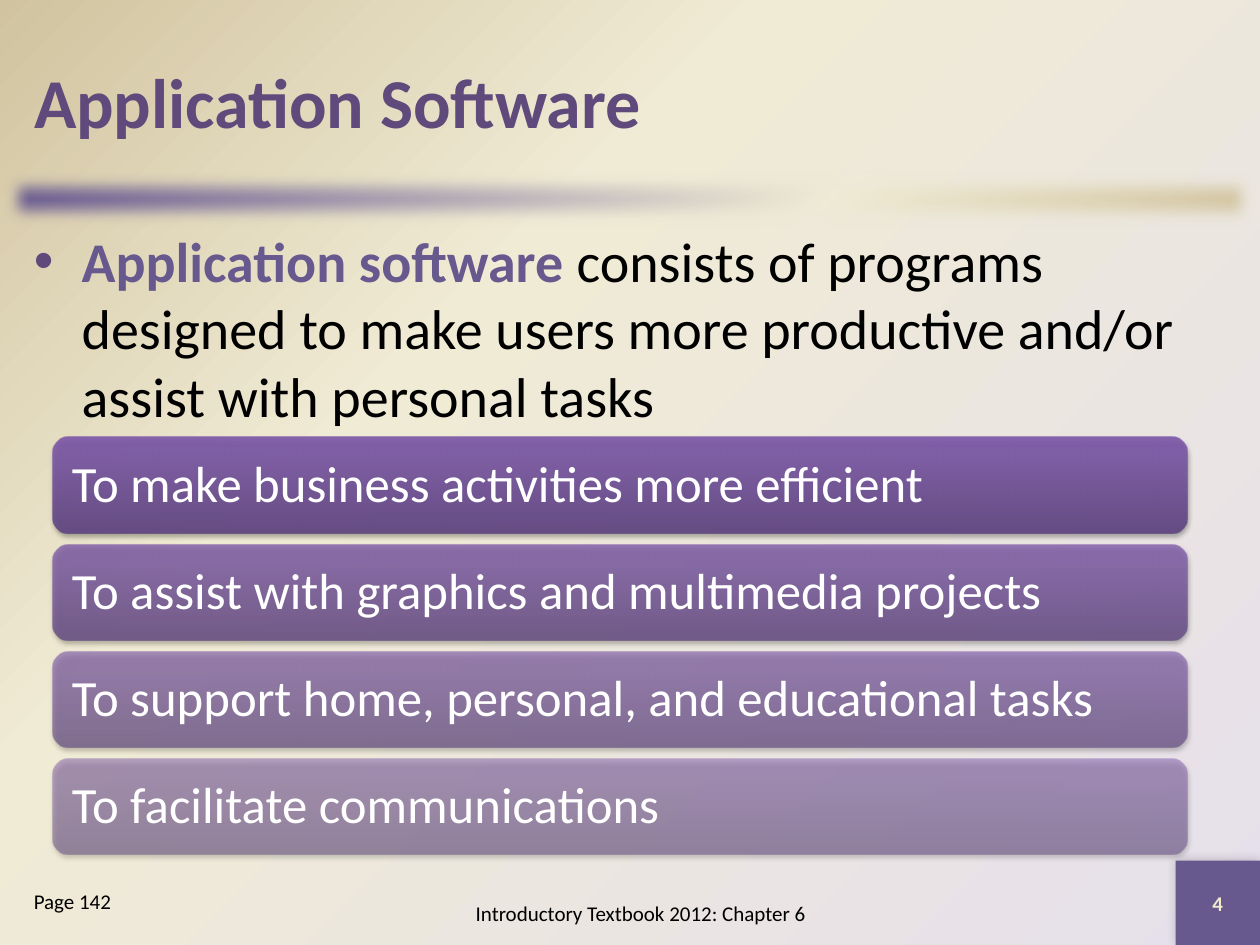
from dataclasses import dataclass

from lxml import etree
from pptx import Presentation
from pptx.dml.color import RGBColor
from pptx.enum.shapes import MSO_SHAPE
from pptx.enum.text import MSO_ANCHOR, PP_ALIGN
from pptx.oxml.ns import qn
from pptx.util import Inches, Pt

RECT, ROUNDED = MSO_SHAPE.RECTANGLE, MSO_SHAPE.ROUNDED_RECTANGLE
TOP, MIDDLE = MSO_ANCHOR.TOP, MSO_ANCHOR.MIDDLE
LEFT, CENTER = PP_ALIGN.LEFT, PP_ALIGN.CENTER


@dataclass(frozen=True)
class Theme:
    """Colours, font and type sizes of the slide."""
    font: str = "Calibri"
    title: str = "604A7B"
    accent: str = "67588E"
    lavender: str = "E6E0EC"
    cream: str = "F0EBD5"
    tan: str = "D1C39F"
    number: str = "EEEBCA"
    text: str = "000000"
    white: str = "FFFFFF"
    bars: tuple = ((0, "5F4480"), (80, "7B58A6"), (100, "7C57A8"))
    title_size: int = 40
    body_size: int = 32
    bar_size: int = 29
    small_size: int = 12


THEME = Theme()


def add_xml(parent, tag, **attrs):
    """Append a drawing element with the given attributes."""
    return etree.SubElement(parent, qn(tag), {k: str(v) for k, v in attrs.items()})


def add_color(parent, color, opacity=100):
    """Append a colour with an opacity in percent."""
    clr = add_xml(parent, "a:srgbClr", val=color)
    if opacity < 100:
        add_xml(clr, "a:alpha", val=opacity * 1000)


def set_gradient(fill, element, stops, angle=None, opacity=100):
    """Apply a linear gradient, or a circular one from the lower right corner."""
    fill.gradient()
    grad = element.find(".//" + qn("a:gradFill"))
    for child in list(grad):
        grad.remove(child)
    gs_lst = add_xml(grad, "a:gsLst")
    for pos, color in stops:
        add_color(add_xml(gs_lst, "a:gs", pos=pos * 1000), color, opacity)
    if angle is None:
        path = add_xml(grad, "a:path", path="circle")
        add_xml(path, "a:fillToRect", l=100000, t=100000)
    else:
        add_xml(grad, "a:lin", ang=angle * 60000, scaled=0)


def add_shadow(shape, opacity, blur, dist, angle):
    """Give a shape a soft black outer shadow."""
    effects = shape.element.spPr.find(qn("a:effectLst"))
    shadow = add_xml(effects, "a:outerShdw", blurRad=Pt(blur), dist=Pt(dist),
                     dir=angle * 60000, algn="ctr", rotWithShape=0)
    add_color(shadow, THEME.text, opacity)


def add_box(s, kind, left, top, width, height):
    """Add a shape without line or inherited shadow."""
    sp = s.shapes.add_shape(kind, Inches(left), Inches(top), Inches(width), Inches(height))
    sp.shadow.inherit = False
    sp.line.fill.background()
    return sp


def add_run(p, text, size, color, bold=False):
    """Add a formatted run to a paragraph."""
    r = p.add_run()
    r.text = text
    r.font.name = THEME.font
    r.font.size = Pt(size)
    r.font.bold = bold
    r.font.color.rgb = RGBColor.from_string(color)


def set_text(sp, text, size=THEME.small_size, color=THEME.text, bold=False,
             align=LEFT, anchor=MIDDLE, inset=0.1):
    """Write one formatted paragraph into a shape and return it."""
    tf = sp.text_frame
    tf.word_wrap = True
    tf.vertical_anchor = anchor
    tf.margin_left = tf.margin_right = Inches(inset)
    p = tf.paragraphs[0]
    p.alignment = align
    add_run(p, text, size, color, bold)
    return p


def add_text(s, text, left, top, width, height, **fmt):
    """Add a text box and return its paragraph."""
    sp = s.shapes.add_textbox(Inches(left), Inches(top), Inches(width), Inches(height))
    return set_text(sp, text, **fmt)


def add_bullet(p, color):
    """Give a paragraph a coloured bullet and a hanging indent."""
    pPr = p._p.get_or_add_pPr()
    pPr.set("marL", str(Inches(0.38)))
    pPr.set("indent", str(Inches(-0.38)))
    add_color(add_xml(pPr, "a:buClr"), color)
    add_xml(pPr, "a:buFont", typeface="Arial")
    add_xml(pPr, "a:buChar", char="•")


def add_divider(s):
    """Add the soft-edged gradient band below the title."""
    sp = add_box(s, RECT, 0, 1.33, 10, 0.5)
    stops = ((0, THEME.accent), (65, THEME.cream), (100, THEME.tan))
    set_gradient(sp.fill, sp.element, stops, 45)
    add_xml(sp.element.spPr.find(qn("a:effectLst")), "a:softEdge", rad=Pt(10))


def add_page_number(s, number):
    """Add the corner square holding the page number."""
    sp = add_box(s, RECT, 9.33, 6.83, 0.67, 0.67)
    sp.fill.solid()
    sp.fill.fore_color.rgb = RGBColor.from_string(THEME.accent)
    add_shadow(sp, 20, 6, 0, 225)
    set_text(sp, number, color=THEME.number, bold=True, align=CENTER)


def add_title(s, text):
    """Place and fill the title placeholder."""
    sp = s.shapes.title
    sp.left, sp.top, sp.width, sp.height = map(Inches, (0.17, 0.17, 9.67, 1.25))
    set_text(sp, text, size=THEME.title_size, color=THEME.title, bold=True)


def add_bars(s, labels):
    """Stack labelled bars that fade from top to bottom."""
    for i, (label, opacity) in enumerate(labels):
        top = 3.47 + i * 0.85
        sp = add_box(s, ROUNDED, 0.42, top, 9, 0.76)
        set_gradient(sp.fill, sp.element, THEME.bars, 270, opacity)
        add_shadow(sp, 35, 3.1, 1.8, 90)
        p = add_text(s, label, 0.45, top + 0.04, 8.93, 0.69, size=THEME.bar_size,
                     color=THEME.white, inset=0.12)
        p.line_spacing = 0.9


def main():
    """Build and save the slide."""
    prs = Presentation()
    prs.slide_width, prs.slide_height = Inches(10), Inches(7.5)
    s = prs.slides.add_slide(prs.slide_layouts[5])
    stops = ((0, THEME.lavender), (65, THEME.cream), (100, THEME.tan))
    set_gradient(s.background.fill, s.element, stops)
    add_divider(s)
    add_page_number(s, "4")
    add_title(s, "Application Software")
    p = add_text(s, "Application software ", 0.17, 1.75, 9.67, 1.7, size=THEME.body_size,
                 color=THEME.accent, bold=True, anchor=TOP)
    add_run(p, "consists of programs designed to make users more productive "
            "and/or assist with personal tasks", THEME.body_size, THEME.text)
    p.space_before = Pt(6.4)
    add_bullet(p, THEME.title)
    add_text(s, "Introductory Textbook 2012: Chapter 6", 3, 7, 4.17, 0.5, align=CENTER)
    add_text(s, "Page 142", 0.17, 7, 1.83, 0.5, anchor=TOP)
    add_bars(s, (
        ("To make business activities more efficient", 90),
        ("To assist with graphics and multimedia projects", 77),
        ("To support home, personal, and educational tasks", 63),
        ("To facilitate communications", 50),
    ))
    prs.save("out.pptx")


if __name__ == "__main__":
    main()
